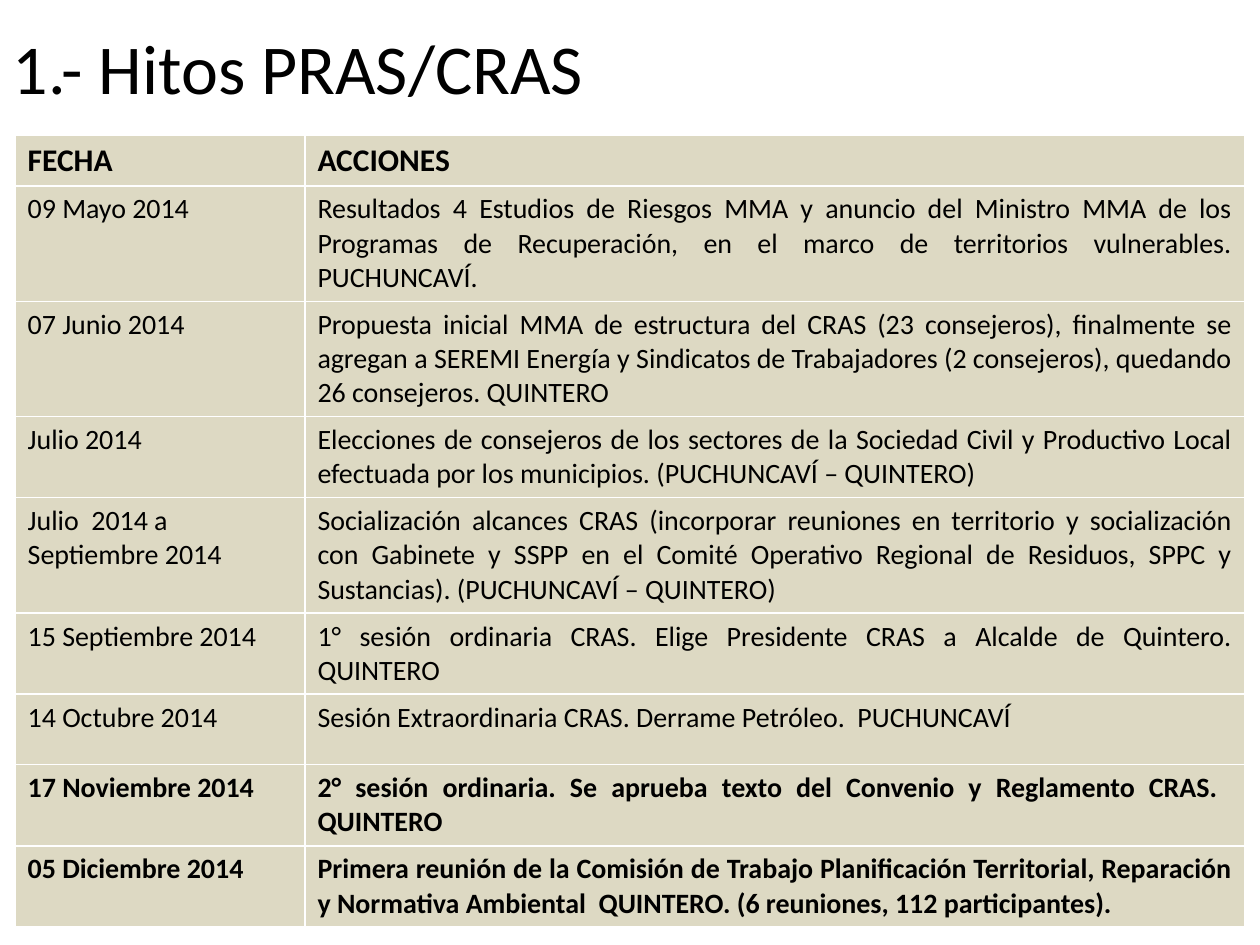
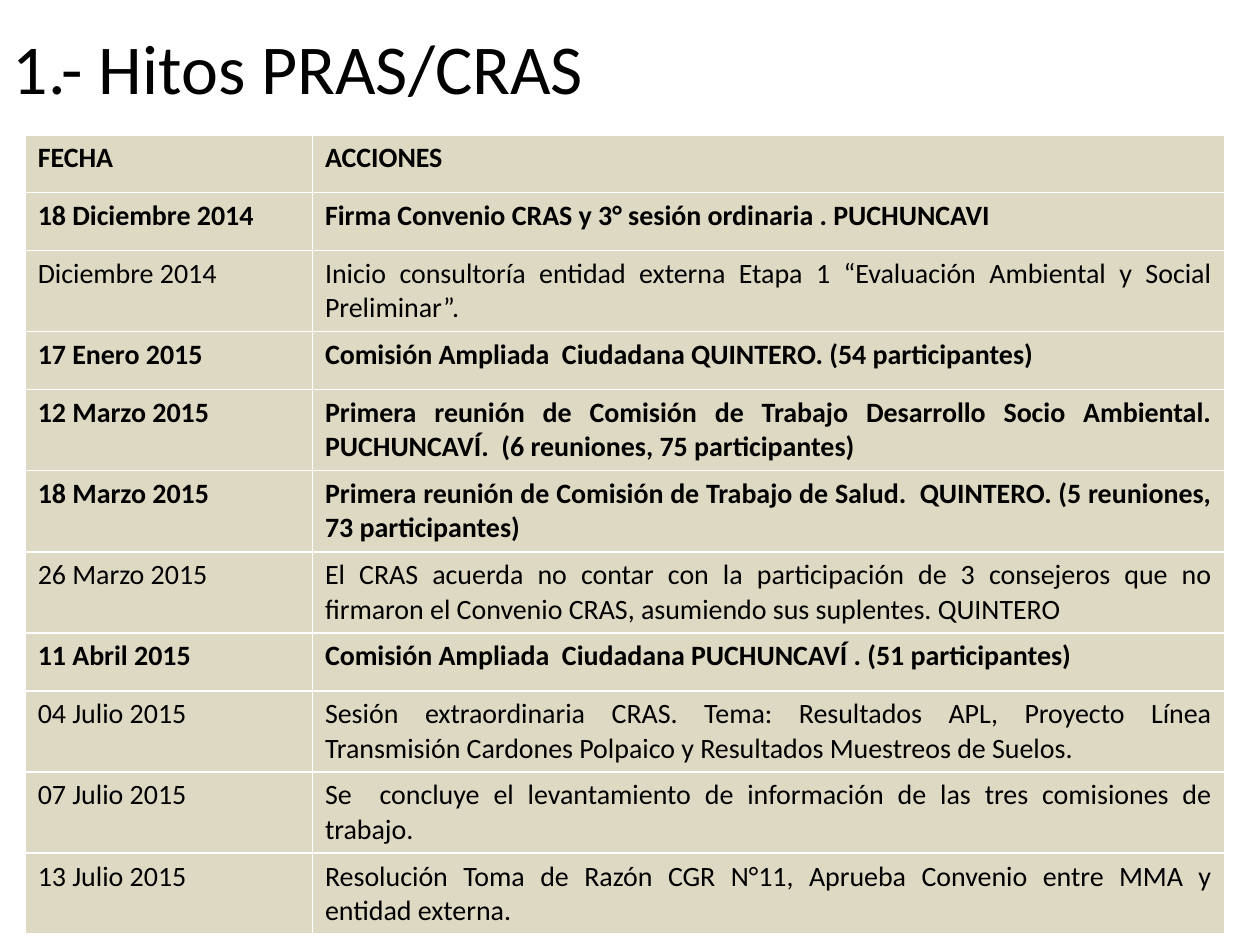
from dataclasses import dataclass

from pptx import Presentation
from pptx.dml.color import RGBColor
from pptx.enum.text import MSO_ANCHOR as Anchor, MSO_AUTO_SIZE as AutoSize, PP_ALIGN as Align
from pptx.util import Inches, Pt


@dataclass(frozen=True)
class Theme:
    font: str = "Calibri"
    ink: RGBColor = RGBColor(0, 0, 0)
    sand: RGBColor = RGBColor(0xDD, 0xD9, 0xC3)
    title_size: int = 40
    body_size: int = 16
    large_header_size: int = 18


theme = Theme()
presentation = Presentation()
presentation.slide_width = Inches(10)
presentation.slide_height = Inches(7.5)
column = presentation.slide_width / 100
row = presentation.slide_height / 100

TITLE = "1.- Hitos PRAS/CRAS"
HEADER = ("FECHA", "ACCIONES")
TABLE_TOP = 14.27
ONE_LINE, TWO_LINES, THREE_LINES = 6.13, 8.53, 12.13

milestones_2014 = [
    (THREE_LINES, False, "09 Mayo 2014",
     "Resultados 4 Estudios de Riesgos MMA y anuncio del Ministro MMA de los Programas de "
     "Recuperación, en el marco de territorios vulnerables. PUCHUNCAVÍ."),
    (THREE_LINES, False, "07 Junio 2014",
     "Propuesta inicial MMA de estructura del CRAS (23 consejeros), finalmente se agregan a "
     "SEREMI Energía y Sindicatos de Trabajadores (2 consejeros), quedando 26 consejeros. QUINTERO"),
    (TWO_LINES, False, "Julio 2014",
     "Elecciones de consejeros de los sectores de la Sociedad Civil y Productivo Local "
     "efectuada por los municipios. (PUCHUNCAVÍ – QUINTERO)"),
    (THREE_LINES, False, "Julio  2014 a Septiembre 2014",
     "Socialización alcances CRAS (incorporar reuniones en territorio y socialización con "
     "Gabinete y SSPP en el Comité Operativo Regional de Residuos, SPPC y Sustancias). "
     "(PUCHUNCAVÍ – QUINTERO)"),
    (TWO_LINES, False, "15 Septiembre 2014",
     "1° sesión ordinaria CRAS. Elige Presidente CRAS a Alcalde de Quintero. QUINTERO"),
    (7.47, False, "14 Octubre 2014",
     "Sesión Extraordinaria CRAS. Derrame Petróleo.  PUCHUNCAVÍ"),
    (TWO_LINES, True, "17 Noviembre 2014",
     "2° sesión ordinaria. Se aprueba texto del Convenio y Reglamento CRAS.  QUINTERO"),
    (TWO_LINES, True, "05 Diciembre 2014",
     "Primera reunión de la Comisión de Trabajo Planificación Territorial, Reparación y "
     "Normativa Ambiental  QUINTERO. (6 reuniones, 112 participantes)."),
]

milestones_2015 = [
    (ONE_LINE, True, "18 Diciembre 2014",
     "Firma Convenio CRAS y 3° sesión ordinaria . PUCHUNCAVI"),
    (TWO_LINES, False, "Diciembre 2014",
     "Inicio consultoría entidad externa Etapa 1 “Evaluación Ambiental y Social Preliminar”."),
    (ONE_LINE, True, "17 Enero 2015",
     "Comisión Ampliada  Ciudadana QUINTERO. (54 participantes)"),
    (TWO_LINES, True, "12 Marzo 2015",
     "Primera reunión de Comisión de Trabajo Desarrollo Socio Ambiental. PUCHUNCAVÍ.  "
     "(6 reuniones, 75 participantes)"),
    (TWO_LINES, True, "18 Marzo 2015",
     "Primera reunión de Comisión de Trabajo de Salud.  QUINTERO. (5 reuniones, 73 participantes)"),
    (TWO_LINES, False, "26 Marzo 2015",
     "El CRAS acuerda no contar con la participación de 3 consejeros que no firmaron el "
     "Convenio CRAS, asumiendo sus suplentes. QUINTERO"),
    (ONE_LINE, True, "11 Abril 2015",
     "Comisión Ampliada  Ciudadana PUCHUNCAVÍ . (51 participantes)"),
    (TWO_LINES, False, "04 Julio 2015",
     "Sesión extraordinaria CRAS. Tema: Resultados APL, Proyecto Línea Transmisión Cardones "
     "Polpaico y Resultados Muestreos de Suelos."),
    (TWO_LINES, False, "07 Julio 2015",
     "Se  concluye el levantamiento de información de las tres comisiones de trabajo."),
    (TWO_LINES, False, "13 Julio 2015",
     "Resolución Toma de Razón CGR N°11, Aprueba Convenio entre MMA y entidad externa."),
]

pages = [
    (1.2, (23, 74.6), 5.33, theme.large_header_size, milestones_2014),
    (2, (22.8, 72.4), ONE_LINE, theme.body_size, milestones_2015),
]


def write(paragraph, text, size, bold=False, align=Align.LEFT):
    paragraph.alignment = align
    run = paragraph.add_run()
    run.text = text
    run.font.name = theme.font
    run.font.size = Pt(size)
    run.font.bold = bold
    run.font.color.rgb = theme.ink


for left, widths, header_height, header_size, milestones in pages:
    slide = presentation.slides.add_slide(presentation.slide_layouts[5])

    title = slide.shapes.title
    title.left, title.top = 0, int(1.73 * row)
    title.width, title.height = int(77.6 * column), int(10.53 * row)
    title.text_frame.vertical_anchor = Anchor.MIDDLE
    title.text_frame.auto_size = AutoSize.NONE
    write(title.text_frame.paragraphs[0], TITLE, theme.title_size)

    lines = [(header_height, True, *HEADER), *milestones]
    total_height = sum(line[0] for line in lines)
    table = slide.shapes.add_table(
        len(lines), len(widths), int(left * column), int(TABLE_TOP * row),
        int(sum(widths) * column), int(total_height * row)).table
    table.horz_banding = False
    for table_column, width in zip(table.columns, widths):
        table_column.width = int(width * column)

    for index, (height, bold, *texts) in enumerate(lines):
        table.rows[index].height = int(height * row)
        size = theme.body_size if index else header_size
        for position, text in enumerate(texts):
            cell = table.cell(index, position)
            cell.fill.solid()
            cell.fill.fore_color.rgb = theme.sand
            align = Align.JUSTIFY if index and position else Align.LEFT
            write(cell.text_frame.paragraphs[0], text, size, bold, align)

presentation.save("out.pptx")
